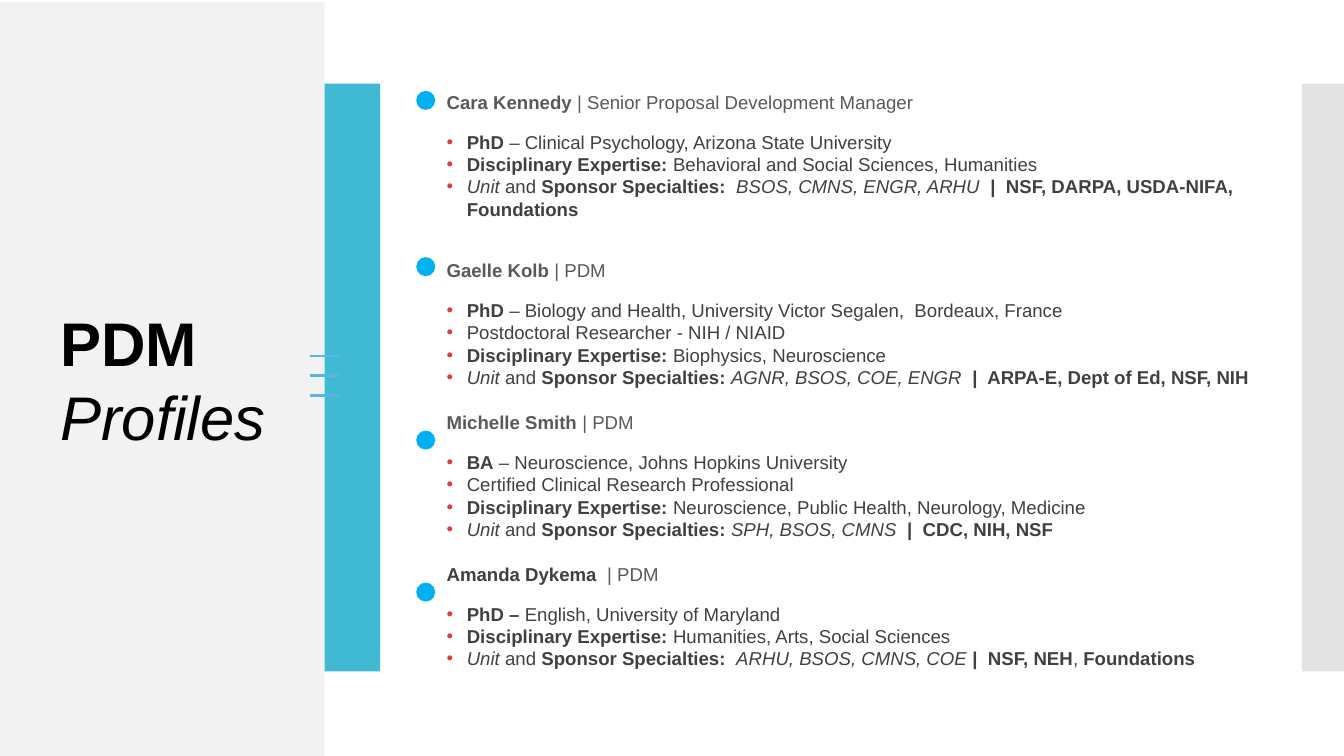
from lxml import etree
from pptx import Presentation
from pptx.dml.color import RGBColor
from pptx.enum.shapes import MSO_CONNECTOR, MSO_SHAPE
from pptx.enum.text import MSO_ANCHOR, MSO_AUTO_SIZE, PP_ALIGN
from pptx.oxml.ns import qn
from pptx.util import Cm, Pt

RECTANGLE, OVAL = MSO_SHAPE.RECTANGLE, MSO_SHAPE.OVAL
STRAIGHT = MSO_CONNECTOR.STRAIGHT
MIDDLE, NO_FIT, LEFT = MSO_ANCHOR.MIDDLE, MSO_AUTO_SIZE.NONE, PP_ALIGN.LEFT

TEAL = RGBColor(0x40, 0xBA, 0xD2)
SILVER = RGBColor(0xC8, 0xC8, 0xC8)
PANEL = RGBColor(0xF2, 0xF2, 0xF2)
TICK = RGBColor(0x5A, 0xB3, 0xE3)
DOT = RGBColor(0x00, 0xB0, 0xF0)
RED = RGBColor(0xE0, 0x3A, 0x3E)
BLACK = RGBColor(0, 0, 0)
HEADING = RGBColor(0x59, 0x59, 0x59)
DETAIL = RGBColor(0x40, 0x40, 0x40)

PLAIN = {"bold": False, "italic": False}
BOLD = {"bold": True, "italic": False}
ITALIC = {"bold": False, "italic": True}
FRAME = {"word_wrap": True, "auto_size": NO_FIT, "vertical_anchor": MIDDLE}
TITLE_LINES = {"alignment": LEFT, "line_spacing": Pt(53), "space_before": Pt(0)}
PROFILE_LINES = {"alignment": LEFT, "line_spacing": Pt(15.93), "space_after": Pt(0)}
DETAIL_GAP = Pt(12.6)


def expertise(fields):
    return [("Disciplinary Expertise: ", BOLD), (fields, PLAIN)]


def specialties(units, *sponsors, gap=" "):
    return [("Unit ", ITALIC), ("and", PLAIN), (" Sponsor Specialties:" + gap, BOLD),
            (units, ITALIC), *sponsors]


PROFILES = [
    {"name": "Cara Kennedy ", "role": "| Senior Proposal Development Manager",
     "name_color": HEADING, "gap": Pt(0), "dot_top": 2.29,
     "details": [
         [("PhD", BOLD), (" – Clinical Psychology, Arizona State University", PLAIN)],
         expertise("Behavioral and Social Sciences, Humanities"),
         specialties("BSOS, CMNS, ENGR, ARHU  ",
                     ("|  NSF, DARPA, USDA-NIFA, Foundations", BOLD), gap="  ")]},
    {"name": "Gaelle Kolb ", "role": "| PDM",
     "name_color": HEADING, "gap": Pt(28), "dot_top": 6.48,
     "details": [
         [("PhD", BOLD),
          (" – Biology and Health, University Victor Segalen,  Bordeaux, France", PLAIN)],
         [("Postdoctoral Researcher - NIH / NIAID", PLAIN)],
         expertise("Biophysics, Neuroscience"),
         specialties("AGNR, BSOS, COE, ENGR  ", ("|  ARPA-E, Dept of Ed, NSF, NIH", BOLD))]},
    {"name": "Michelle Smith", "role": " | PDM",
     "name_color": HEADING, "gap": Pt(16.2), "dot_top": 10.85,
     "details": [
         [("BA", BOLD), (" – Neuroscience, Johns Hopkins University", PLAIN)],
         [("Certified Clinical Research Professional", PLAIN)],
         expertise("Neuroscience, Public Health, Neurology, Medicine"),
         specialties("SPH, BSOS, CMNS  ", ("|  CDC, NIH, NSF", BOLD))]},
    {"name": "Amanda Dykema ", "role": " | PDM",
     "name_color": DETAIL, "gap": Pt(16.2), "dot_top": 14.68,
     "details": [
         [("PhD – ", BOLD), ("English, University of Maryland", PLAIN)],
         expertise("Humanities, Arts, Social Sciences"),
         specialties("ARHU, BSOS, CMNS, COE ", ("|  NSF, NEH", BOLD), (", ", PLAIN),
                     ("Foundations", BOLD), gap="  ")]},
]


def apply_format(target, values):
    for attribute, value in values.items():
        setattr(target, attribute, value)


def place(shape, left, top, width, height):
    apply_format(shape, {"left": Cm(left), "top": Cm(top),
                         "width": Cm(width), "height": Cm(height)})


def add_run(paragraph, wording, style, size, color):
    run = paragraph.add_run()
    run.text = wording
    apply_format(run.font, {"name": "Arial", "size": Pt(size), **style})
    run.font.color.rgb = color


def set_bullet(paragraph, hanging):
    properties = paragraph._p.get_or_add_pPr()
    properties.set("marL", str(hanging))
    properties.set("indent", str(-hanging))
    if not hanging:
        etree.SubElement(properties, qn("a:buNone"))
        return
    bullet_color = etree.SubElement(properties, qn("a:buClr"))
    etree.SubElement(bullet_color, qn("a:srgbClr"), val=str(RED))
    etree.SubElement(properties, qn("a:buFont"), typeface="Arial")
    etree.SubElement(properties, qn("a:buChar"), char="•")


def add_block(slide, preset, color, left, top, width, height):
    block = slide.shapes.add_shape(preset, Cm(left), Cm(top), Cm(width), Cm(height))
    block.shadow.inherit = False
    block.fill.solid()
    block.fill.fore_color.rgb = color
    block.line.fill.background()
    return block


def add_bands(slide, left, top, right, height):
    add_block(slide, RECTANGLE, TEAL, left, top, 1.4, height)
    edge = add_block(slide, RECTANGLE, SILVER, right - 1.06, top, 1.06, height)
    fill_color = edge.fill._xPr.find(qn("a:solidFill"))[0]
    etree.SubElement(fill_color, qn("a:alpha"), val="50000")


def add_title_panel(slide, left, top, width, height):
    title = slide.shapes.title
    place(title, left, top, width, height)
    title.fill.solid()
    title.fill.fore_color.rgb = PANEL
    apply_format(title.text_frame, {**FRAME, "margin_left": Cm(1.52)})
    heading = title.text_frame.paragraphs[0]
    apply_format(heading, TITLE_LINES)
    add_run(heading, "PDM ", BOLD, 44, BLACK)
    heading.add_line_break()
    add_run(heading, "Profiles", ITALIC, 44, BLACK)


def add_ticks(slide, left, top, width, height):
    for row in range(3):
        level = Cm(top + row * height / 2)
        tick = slide.shapes.add_connector(STRAIGHT, Cm(left), level, Cm(left + width), level)
        tick.line.color.rgb = TICK
        tick.line.width = Pt(2)
        etree.SubElement(tick._element.spPr, qn("a:effectLst"))


def add_profiles(slide, left, top, width, height):
    body = slide.placeholders[1]
    place(body, left, top, width, height)
    frame = body.text_frame
    apply_format(frame, FRAME)
    for index, profile in enumerate(PROFILES):
        heading = frame.add_paragraph() if index else frame.paragraphs[0]
        apply_format(heading, {**PROFILE_LINES, "space_before": profile["gap"]})
        set_bullet(heading, 0)
        add_run(heading, profile["name"], BOLD, 13.3, profile["name_color"])
        add_run(heading, profile["role"], PLAIN, 13.3, HEADING)
        for position, detail in enumerate(profile["details"]):
            line = frame.add_paragraph()
            gap = Pt(0) if position else DETAIL_GAP
            apply_format(line, {**PROFILE_LINES, "space_before": gap})
            set_bullet(line, Cm(0.51))
            for wording, style in detail:
                add_run(line, wording, style, 13.3, DETAIL)
        add_block(slide, OVAL, DOT, left - 0.51, profile["dot_top"], 0.48, 0.48)


def main():
    deck = Presentation()
    apply_format(deck, {"slide_width": Cm(33.87), "slide_height": Cm(19.05)})
    slide = deck.slides.add_slide(deck.slide_layouts[1])
    add_bands(slide, 8.18, 2.11, 33.87, 14.81)
    add_title_panel(slide, 0, 0.05, 8.18, 19)
    add_ticks(slide, 7.8, 8.97, 0.76, 1)
    add_profiles(slide, 11, 1.96, 21.62, 15.24)
    deck.save("out.pptx")


if __name__ == "__main__":
    main()
